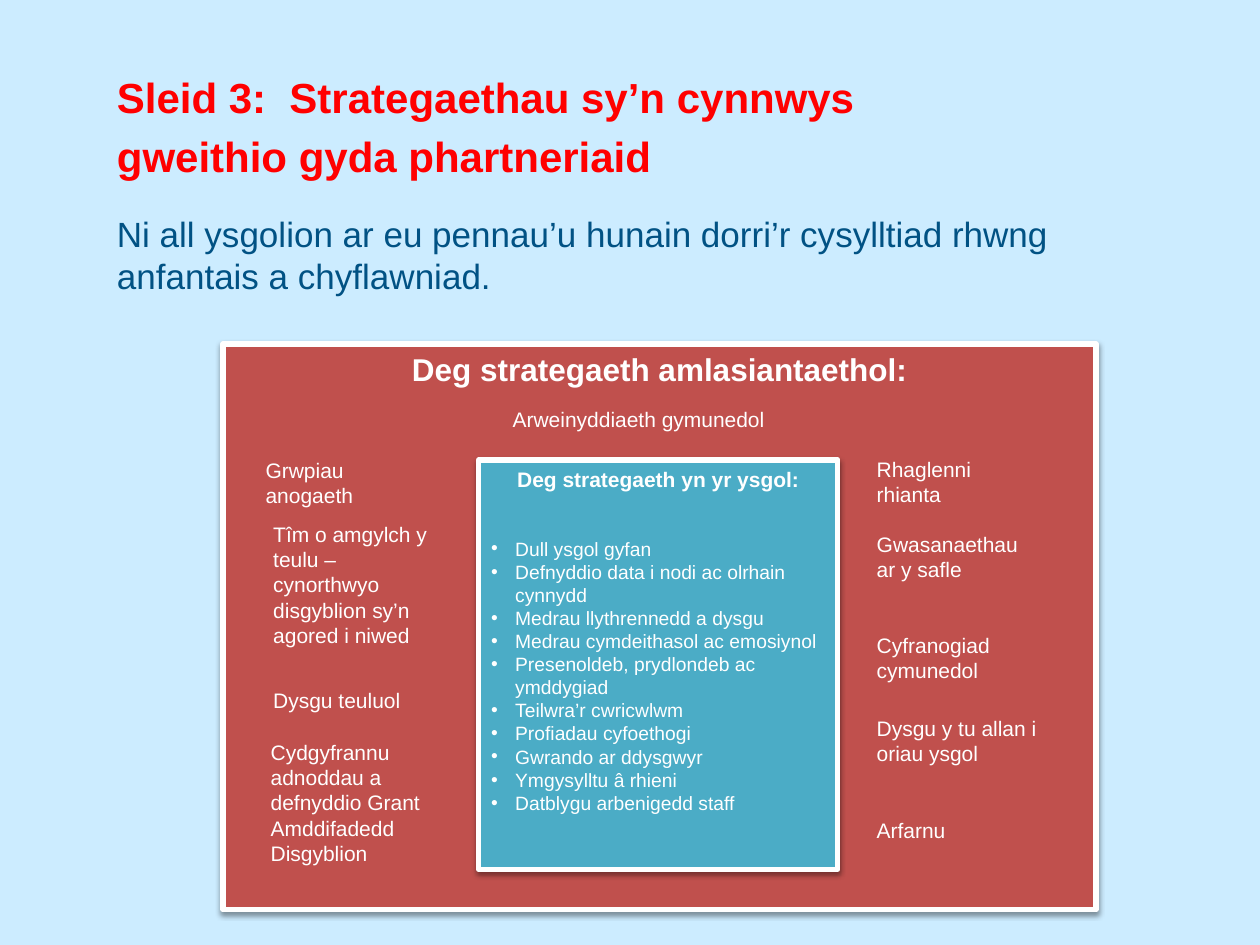
from lxml import etree
from pptx import Presentation
from pptx.dml.color import RGBColor
from pptx.enum.shapes import MSO_SHAPE as Shape
from pptx.enum.text import MSO_ANCHOR as Anchor, PP_ALIGN as Align
from pptx.oxml import parse_xml
from pptx.oxml.ns import nsdecls, qn
from pptx.util import Inches, Pt

COLOURS = {
    "background": "CCECFF",
    "heading": "FF0000",
    "statement": "015284",
    "agency": "C0504D",
    "school": "4BACC6",
    "white": "FFFFFF",
    "shadow": "000000",
}
HEADING = ["Sleid 3:  Strategaethau sy’n cynnwys", "gweithio gyda phartneriaid"]
STATEMENT = "Ni all ysgolion ar eu pennau’u hunain dorri’r cysylltiad rhwng anfantais a chyflawniad."
AGENCY_TITLE = "Deg strategaeth amlasiantaethol:"
AGENCY_STRATEGIES = [
    ("Arweinyddiaeth gymunedol", 2.2, 0.45, 2.38, 0.3),
    ("Rhaglenni rhianta", 5.09, 0.84, 1.5, 0.51),
    ("Gwasanaethau ar y safle", 5.09, 1.44, 1.42, 0.55),
    ("Cyfranogiad cymunedol", 5.09, 2.24, 1.48, 0.47),
    ("Dysgu y tu allan i oriau ysgol", 5.09, 2.9, 1.5, 0.63),
    ("Arfarnu", 5.09, 3.71, 1.2, 0.36),
    ("Grwpiau anogaeth", 0.24, 0.85, 1.5, 0.32),
    ("Tîm o amgylch y teulu – cynorthwyo disgyblion sy’n agored i niwed", 0.3, 1.36, 1.49, 1.11),
    ("Dysgu teuluol", 0.3, 2.68, 1.58, 0.39),
    ("Cydgyfrannu adnoddau a defnyddio Grant Amddifadedd Disgyblion", 0.28, 3.09, 1.54, 1.06),
]
SCHOOL_TITLE = "Deg strategaeth yn yr ysgol:"
SCHOOL_STRATEGIES = [
    "Dull ysgol gyfan",
    "Defnyddio data i nodi ac olrhain cynnydd",
    "Medrau llythrennedd a dysgu",
    "Medrau cymdeithasol ac emosiynol",
    "Presenoldeb, prydlondeb ac ymddygiad",
    "Teilwra’r cwricwlwm",
    "Profiadau cyfoethogi",
    "Gwrando ar ddysgwyr",
    "Ymgysylltu â rhieni",
    "Datblygu arbenigedd staff",
]


def colour(name):
    """Return the named colour."""
    return RGBColor.from_string(COLOURS[name])


def style(para, size, tint="white", bold=False, align=Align.LEFT):
    """Format a paragraph and its runs."""
    para.alignment = align
    for span in para.runs:
        span.font.name = "Arial"
        span.font.size = Pt(size)
        span.font.bold = bold
        span.font.color.rgb = colour(tint)


def add_bullet(para):
    """Give a paragraph a hanging round bullet."""
    props = para._p.get_or_add_pPr()
    indent = Inches(0.19)
    props.set("marL", str(indent))
    props.set("indent", str(-indent))
    etree.SubElement(props, qn("a:buFont")).set("typeface", "Arial")
    etree.SubElement(props, qn("a:buChar")).set("char", "•")


def add_panel(page, left, top, width, height, fill):
    """Add a plain filled rectangle with top-anchored text."""
    panel = page.shapes.add_shape(
        Shape.RECTANGLE, Inches(left), Inches(top), Inches(width), Inches(height))
    panel.shadow.inherit = False
    panel.fill.solid()
    panel.fill.fore_color.rgb = colour(fill)
    panel.line.fill.background()
    panel.text_frame.word_wrap = True
    panel.text_frame.vertical_anchor = Anchor.TOP
    return panel


def frame_panel(panel):
    """Give a panel a white border and a soft shadow below."""
    panel.line.color.rgb = colour("white")
    panel.line.width = Pt(3)
    effects = panel._element.spPr.find(qn("a:effectLst"))
    effects.append(parse_xml(
        f'<a:outerShdw {nsdecls("a")} blurRad="{Pt(3.1)}" dist="{Pt(1.6)}" '
        f'dir="5400000" rotWithShape="0"><a:srgbClr val="{COLOURS["shadow"]}">'
        '<a:alpha val="38000"/></a:srgbClr></a:outerShdw>'))


def add_introduction(page, left, top, width, height):
    """Place the heading and the statement under it."""
    box = page.shapes.add_textbox(Inches(left), Inches(top), Inches(width), Inches(height))
    frame = box.text_frame
    frame.word_wrap = True
    frame.text = "\n".join([*HEADING, STATEMENT])
    first, second, statement = frame.paragraphs
    for para in (first, second):
        style(para, 24, "heading", bold=True)
    second.space_before = Pt(4.8)
    style(statement, 20, "statement")
    statement.space_before = Pt(18)


def add_agency_panel(page, left, top, width, height):
    """Place the multi-agency panel and its ten strategies."""
    panel = add_panel(page, left, top, width, height, "agency")
    frame_panel(panel)
    panel.text_frame.text = AGENCY_TITLE
    style(panel.text_frame.paragraphs[0], 18, bold=True, align=Align.CENTER)
    for text, across, down, label_width, label_height in AGENCY_STRATEGIES:
        label = add_panel(page, left + across, top + down, label_width, label_height, "agency")
        label.text_frame.text = text
        style(label.text_frame.paragraphs[0], 12)


def add_school_panel(page, left, top, width, height):
    """Place the in-school panel with its bulleted strategies."""
    panel = add_panel(page, left, top, width, height, "school")
    frame_panel(panel)
    panel.text_frame.text = "\n".join([SCHOOL_TITLE, *SCHOOL_STRATEGIES])
    title, *items = panel.text_frame.paragraphs
    style(title, 12, bold=True, align=Align.CENTER)
    title.space_after = Pt(26)
    for para in items:
        add_bullet(para)
        style(para, 11)


def main():
    """Build and save the slide."""
    deck = Presentation()
    deck.slide_width, deck.slide_height = Inches(10), Inches(7.5)
    page = deck.slides.add_slide(deck.slide_layouts[6])
    page.background.fill.solid()
    page.background.fill.fore_color.rgb = colour("background")
    add_introduction(page, 0.83, 0.52, 8.5, 2)
    add_agency_panel(page, 1.77, 2.73, 6.93, 4.49)
    add_school_panel(page, 3.8, 3.65, 2.85, 3.25)
    deck.save("out.pptx")


if __name__ == "__main__":
    main()
